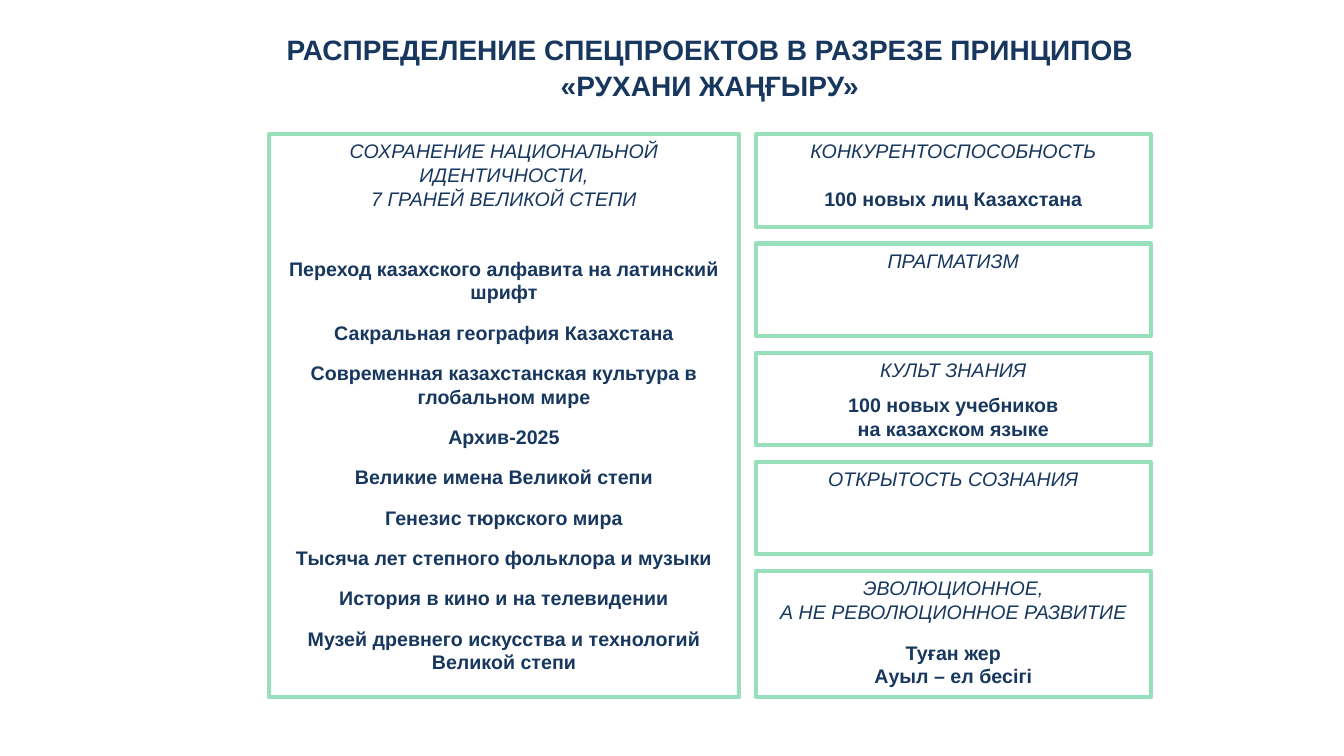
from pptx import Presentation
from pptx.dml.color import RGBColor
from pptx.enum.shapes import MSO_SHAPE
from pptx.enum.text import MSO_ANCHOR, MSO_AUTO_SIZE, PP_ALIGN
from pptx.util import Inches, Pt

NAVY = RGBColor(0x17, 0x37, 0x5E)
MINT = RGBColor(0x98, 0xDF, 0xBB)
RECT = MSO_SHAPE.RECTANGLE
TOP = MSO_ANCHOR.TOP
GROW = MSO_AUTO_SIZE.SHAPE_TO_FIT_TEXT
CENTER = PP_ALIGN.CENTER

COLS, ROWS = 160, 90
LEFT, RIGHT = 32, 90
TITLE = "РАСПРЕДЕЛЕНИЕ СПЕЦПРОЕКТОВ В РАЗРЕЗЕ ПРИНЦИПОВ «РУХАНИ ЖАҢҒЫРУ»"
IDENTITY = ["СОХРАНЕНИЕ НАЦИОНАЛЬНОЙ ИДЕНТИЧНОСТИ,", "7 ГРАНЕЙ ВЕЛИКОЙ СТЕПИ"]
PROJECTS = [
    "Переход казахского алфавита на латинский шрифт",
    "Сакральная география Казахстана",
    "Современная казахстанская культура в глобальном мире",
    "Архив-2025",
    "Великие имена Великой степи",
    "Генезис тюркского мира",
    "Тысяча лет степного фольклора и музыки",
    "История в кино и на телевидении",
    "Музей древнего искусства и технологий Великой степи",
]
PRINCIPLES = [
    (11, "КОНКУРЕНТОСПОСОБНОСТЬ", 17, ["100 новых лиц Казахстана"]),
    (11, "ПРАГМАТИЗМ", 0, []),
    (11, "КУЛЬТ ЗНАНИЯ", 8.5, ["100 новых учебников\vна казахском языке"]),
    (11, "ОТКРЫТОСТЬ СОЗНАНИЯ", 0, []),
    (15, "ЭВОЛЮЦИОННОЕ,\vА НЕ РЕВОЛЮЦИОННОЕ РАЗВИТИЕ", 12.5,
     ["Туған жер", "Ауыл – ел бесігі"]),
]


class Board:
    """Draws titles and framed lists on a slide divided into a grid."""

    def __init__(self, prs):
        self.s = prs.slides.add_slide(prs.slide_layouts[6])
        self.col = prs.slide_width / COLS
        self.row = prs.slide_height / ROWS

    def area(self, x, y, w, h):
        return (round(x * self.col), round(y * self.row),
                round(w * self.col), round(h * self.row))

    def set_text(self, p, text, size=14, bold=False, italic=False, after=0):
        p.text = text
        p.alignment = CENTER
        p.space_after = Pt(after)
        font = p.font
        font.name, font.size = "Arial", Pt(size)
        font.bold, font.italic = bold, italic
        font.color.rgb = NAVY

    def title(self, text, *cells):
        tf = self.s.shapes.add_textbox(*self.area(*cells)).text_frame
        tf.word_wrap = True
        tf.auto_size = GROW
        p = tf.paragraphs[0]
        self.set_text(p, text, size=20, bold=True)
        p.line_spacing = 1.07

    def frame(self, cells, heads, gap, items, after=0):
        sp = self.s.shapes.add_shape(RECT, *self.area(*cells))
        sp.shadow.inherit = False
        sp.fill.background()
        sp.line.color.rgb = MINT
        sp.line.width = Pt(3)
        tf = sp.text_frame
        tf.word_wrap = True
        tf.vertical_anchor = TOP
        for i, text in enumerate(heads + items):
            p = tf.add_paragraph() if i else tf.paragraphs[0]
            is_head = i < len(heads)
            space = after if not is_head else gap if i == len(heads) - 1 else 0
            self.set_text(p, text, bold=not is_head, italic=is_head, after=space)


def main():
    prs = Presentation()
    prs.slide_width, prs.slide_height = Inches(13.33), Inches(7.5)
    board = Board(prs)
    board.title(TITLE, LEFT, 3, 105, 9.6)
    board.frame((LEFT, 16, 56, 67), IDENTITY, 33.5, PROJECTS, after=12)
    for i, (height, head, gap, items) in enumerate(PRINCIPLES):
        board.frame((RIGHT, 16 + 13 * i, 47, height), [head], gap, items)
    prs.save("out.pptx")


if __name__ == "__main__":
    main()
